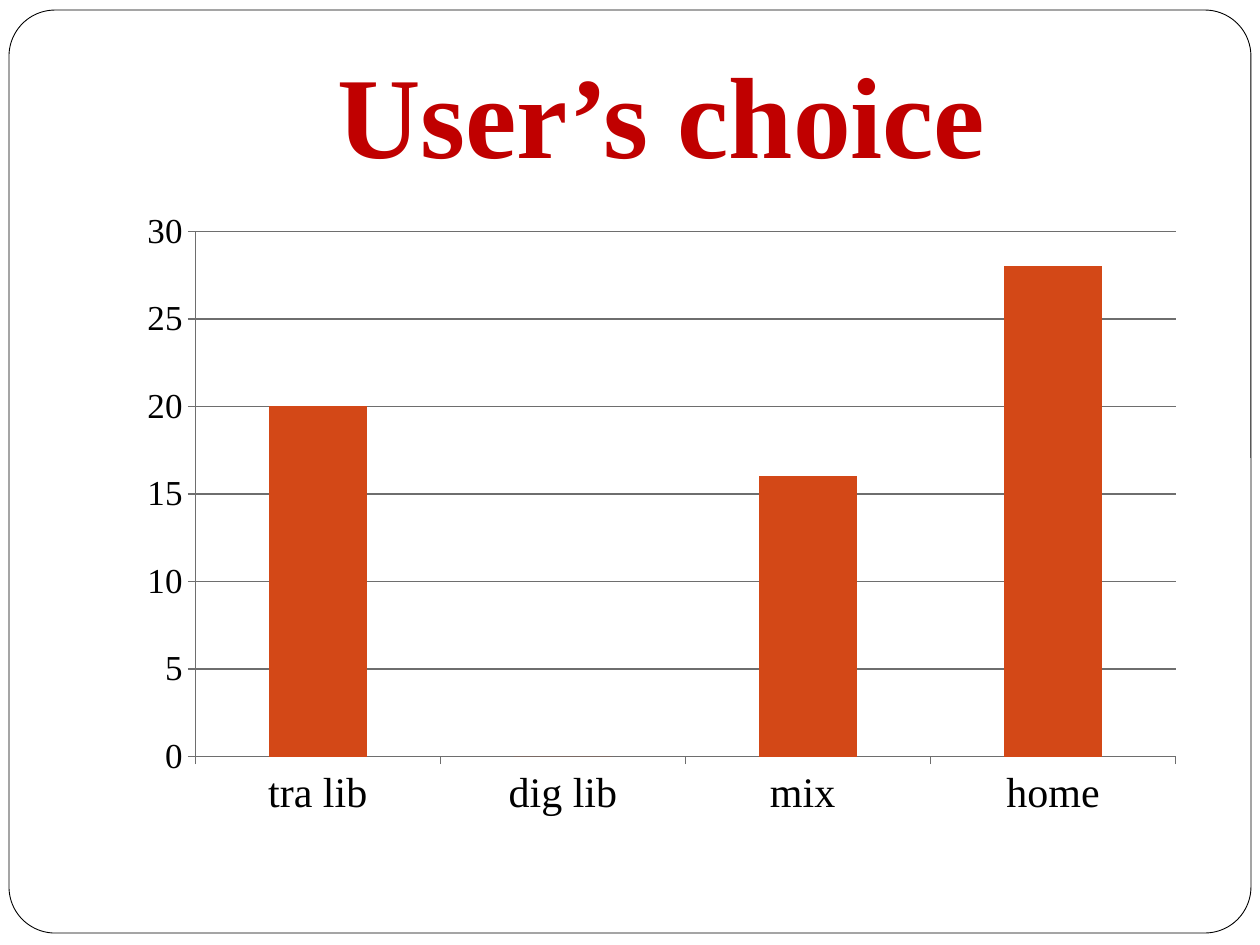
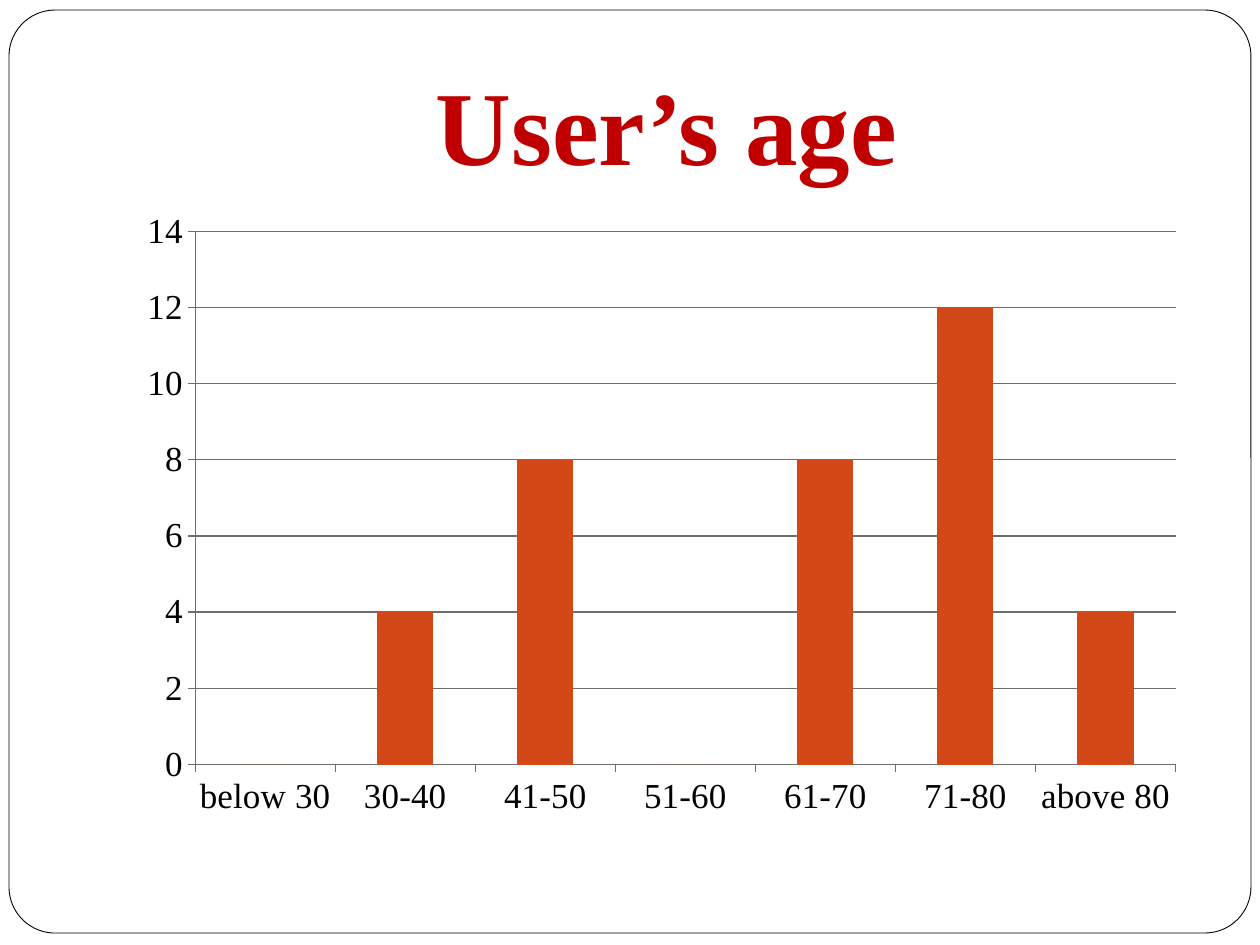
from pptx import Presentation
from pptx.chart.data import CategoryChartData
from pptx.dml.color import RGBColor
from pptx.enum.chart import XL_CHART_TYPE, XL_TICK_MARK
from pptx.enum.shapes import MSO_SHAPE
from pptx.enum.text import MSO_ANCHOR, PP_ALIGN
from pptx.util import Emu, Pt

PX_PER_INCH = 126


def px(length):
    return Emu(round(length * 914400 / PX_PER_INCH))


def color(hex_value):
    return RGBColor.from_string(hex_value)


class Deck:
    """Holds the shared style and the slide being built."""

    FONT = "Times New Roman"
    PAPER, INK, HEADING = "FFFFFF", "000000", "C00000"
    BAR, GRID = "D34817", "6E6E6E"
    FRAME_BOX = (9, 10, 1242, 923)
    CHART_BOX = (126, 199, 1071, 630)

    def __init__(self):
        self.presentation = Presentation()
        self.presentation.slide_width = px(1260)
        self.presentation.slide_height = px(945)
        self.slide = None

    def new_slide(self):
        self.slide = self.presentation.slides.add_slide(self.presentation.slide_layouts[6])
        background = self.slide.background.fill
        background.solid()
        background.fore_color.rgb = color(self.PAPER)
        self.frame()

    def frame(self):
        border = self.slide.shapes.add_shape(
            MSO_SHAPE.ROUNDED_RECTANGLE, *map(px, self.FRAME_BOX))
        border.adjustments[0] = 0.05
        border.shadow.inherit = False
        border.fill.solid()
        border.fill.fore_color.rgb = color(self.PAPER)
        border.line.color.rgb = color(self.INK)
        border.line.width = Pt(0.5)

    def title(self, wording, box, size, bottom_inset):
        heading = self.slide.shapes.add_textbox(*map(px, box)).text_frame
        heading.word_wrap = True
        heading.vertical_anchor = MSO_ANCHOR.BOTTOM
        heading.margin_bottom = px(bottom_inset)
        paragraph = heading.paragraphs[0]
        paragraph.alignment = PP_ALIGN.CENTER
        run = paragraph.add_run()
        run.text = wording
        self.style_font(run.font, size, self.HEADING)
        run.font.bold = True

    def style_font(self, font, size, hex_value):
        font.name = self.FONT
        font.size = Pt(size)
        font.color.rgb = color(hex_value)

    def style_axis(self, axis, label_size):
        axis.major_tick_mark = XL_TICK_MARK.OUTSIDE
        axis.minor_tick_mark = XL_TICK_MARK.NONE
        axis.format.line.color.rgb = color(self.GRID)
        self.style_font(axis.tick_labels.font, label_size, self.INK)

    def column_chart(self, counts, top, step, category_size):
        chart_data = CategoryChartData()
        chart_data.categories = list(counts)
        chart_data.add_series("Series 1", list(counts.values()))
        chart = self.slide.shapes.add_chart(
            XL_CHART_TYPE.COLUMN_CLUSTERED, *map(px, self.CHART_BOX), chart_data).chart
        chart.has_title = False
        chart.has_legend = False
        self.style_font(chart.font, 10, self.INK)

        self.style_axis(chart.category_axis, category_size)
        scale = chart.value_axis
        self.style_axis(scale, 20)
        scale.minimum_scale, scale.maximum_scale = 0, top
        scale.major_unit = step
        scale.major_gridlines.format.line.color.rgb = color(self.GRID)

        columns = chart.plots[0]
        columns.gap_width = 150
        columns.vary_by_categories = False
        bars = columns.series[0].format.fill
        bars.solid()
        bars.fore_color.rgb = color(self.BAR)


def main():
    deck = Deck()

    deck.new_slide()
    deck.title("User’s choice", (126, 38, 1071, 157), size=66, bottom_inset=13)
    choices = {"tra lib": 20, "dig lib": 0, "mix ": 16, "home": 28}
    deck.column_chart(choices, top=30, step=5, category_size=24)

    deck.new_slide()
    ages = {"below 30": 0, "30-40": 4, "41-50": 8, "51-60": 0,
            "61-70": 8, "71-80": 12, "above 80": 4}
    deck.column_chart(ages, top=14, step=2, category_size=20)
    deck.title("User’s age", (199, 53, 935, 140), size=60, bottom_inset=6)

    deck.presentation.save("out.pptx")


if __name__ == "__main__":
    main()
